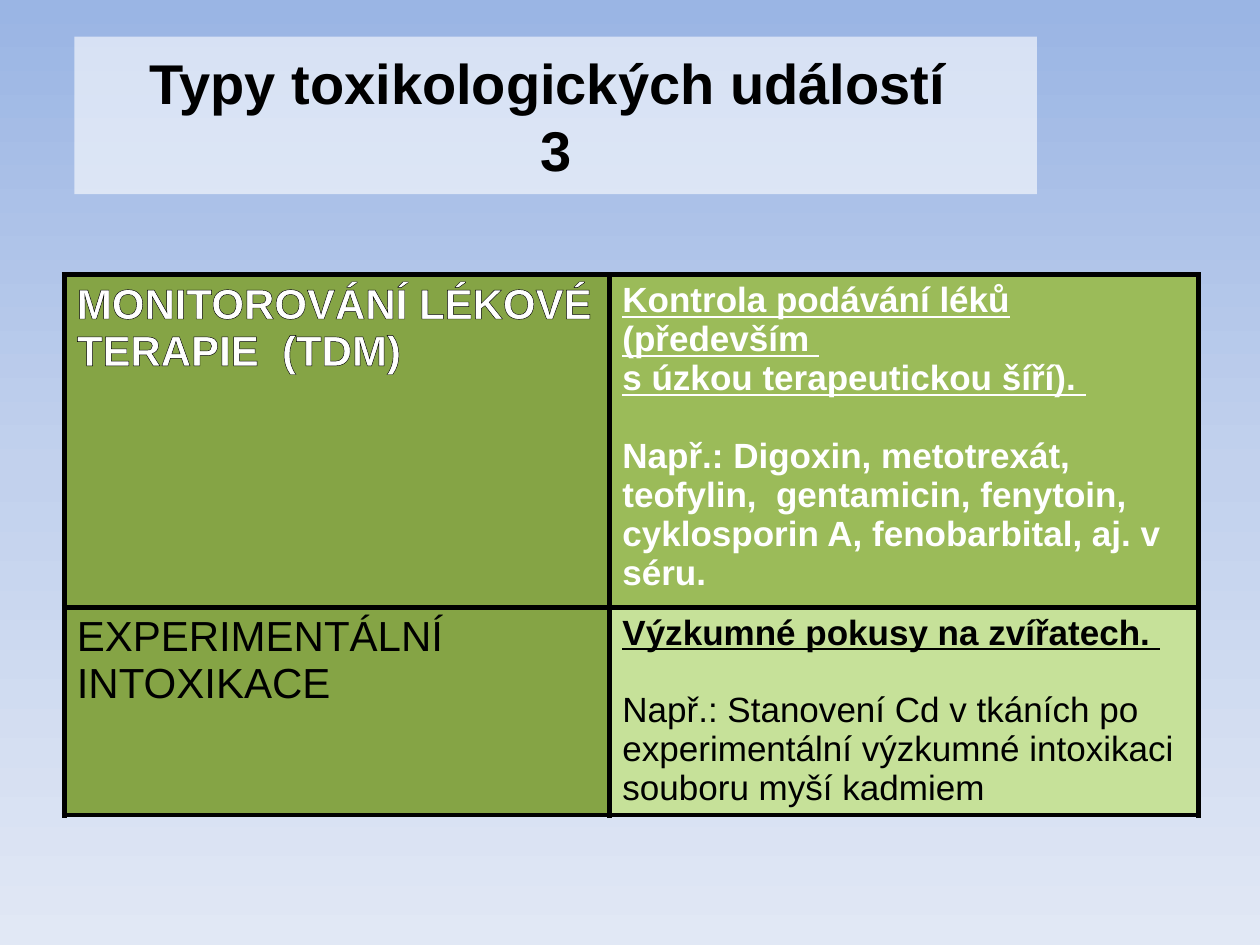
"""Build the slide on types of toxicological events."""
from copy import deepcopy
from dataclasses import dataclass

from lxml.etree import SubElement
from pptx import Presentation
from pptx.dml.color import RGBColor
from pptx.enum.shapes import MSO_SHAPE
from pptx.enum.text import MSO_ANCHOR, PP_ALIGN
from pptx.oxml.ns import qn
from pptx.slide import Slide
from pptx.table import _Cell
from pptx.util import Inches, Pt


@dataclass(frozen=True)
class Theme:
    font: str = "Arial"
    title_size: int = 32
    label_size: int = 24
    detail_size: int = 20
    paragraph_gap: int = 22
    border_width: float = 3
    outline_width: float = 0.75
    black: str = "000000"
    white: str = "FFFFFF"
    label_fill: str = "85A445"
    sky: tuple[str, ...] = ("9AB5E4", "C2D1ED", "E1E8F5")


@dataclass(frozen=True)
class Passage:
    text: str
    size: int
    color: str
    bold: bool = False
    underline: bool = False
    outline: str | None = None


@dataclass(frozen=True)
class EventType:
    label: Passage
    details: tuple[Passage, ...]
    detail_fill: str
    height: float


THEME = Theme()
EVENTS = (
    EventType(
        Passage("MONITOROVÁNÍ LÉKOVÉ TERAPIE  (TDM)", THEME.label_size, THEME.white,
                bold=True, outline=THEME.black),
        (
            Passage("Kontrola podávání léků (především \vs úzkou terapeutickou šíří). ",
                    THEME.detail_size, THEME.white, bold=True, underline=True),
            Passage("Např.: Digoxin, metotrexát, teofylin,  gentamicin, fenytoin, "
                    "cyklosporin A, fenobarbital, aj. v séru.",
                    THEME.detail_size, THEME.white, bold=True),
        ),
        "9BBB59",
        2.64,
    ),
    EventType(
        Passage("EXPERIMENTÁLNÍ INTOXIKACE", THEME.label_size, THEME.black,
                outline=THEME.white),
        (
            Passage("Výzkumné pokusy na zvířatech. ", THEME.detail_size, THEME.black,
                    bold=True, underline=True),
            Passage("Např.: Stanovení Cd v tkáních po experimentální výzkumné "
                    "intoxikaci souboru myší kadmiem", THEME.detail_size, THEME.black),
        ),
        "C6E199",
        1.65,
    ),
)


def add_solid(parent, color: str):
    """Append a solid fill to an XML element and return its colour."""
    fill = SubElement(parent, qn("a:solidFill"))
    return SubElement(fill, qn("a:srgbClr"), val=color)


def paint_background(page: Slide) -> None:
    """Paint the vertical sky gradient."""
    fill = page.background.fill
    fill.gradient()
    fill.gradient_angle = 270
    stop_list = next(page.element.iter(qn("a:gsLst")))
    stop_list.insert(1, deepcopy(stop_list[0]))
    for index, (stop, color) in enumerate(zip(fill.gradient_stops, THEME.sky)):
        stop.position = index / (len(THEME.sky) - 1)
        stop.color.rgb = RGBColor.from_string(color)


def write_passage(paragraph, passage: Passage) -> None:
    """Write a passage into a paragraph and format its runs."""
    paragraph.text = passage.text
    for span in paragraph.runs:
        font = span.font
        font.name = THEME.font
        font.size = Pt(passage.size)
        font.bold = passage.bold
        font.underline = passage.underline
        font.color.rgb = RGBColor.from_string(passage.color)
        if passage.outline:
            properties = span._r.get_or_add_rPr()
            line = SubElement(properties, qn("a:ln"), w=str(Pt(THEME.outline_width)))
            add_solid(line, passage.outline)
            properties.insert(0, line)


def add_title(page: Slide) -> None:
    """Add the translucent title panel."""
    box = page.shapes.add_shape(MSO_SHAPE.RECTANGLE, Inches(0.59), Inches(0.29),
                                Inches(7.64), Inches(1.25))
    box.shadow.inherit = False
    box.line.fill.background()
    box.fill.solid()
    box.fill.fore_color.rgb = RGBColor.from_string(THEME.white)
    color = next(box._element.spPr.iter(qn("a:srgbClr")))
    SubElement(color, qn("a:alpha"), val="60000")
    frame = box.text_frame
    frame.word_wrap = True
    frame.vertical_anchor = MSO_ANCHOR.MIDDLE
    paragraph = frame.paragraphs[0]
    paragraph.alignment = PP_ALIGN.CENTER
    write_passage(paragraph, Passage("Typy toxikologických událostí \v3",
                                     THEME.title_size, THEME.black, bold=True))


def fill_cell(cell: _Cell, passages: tuple[Passage, ...], color: str) -> None:
    """Write, border and fill one table cell."""
    frame = cell.text_frame
    for index, passage in enumerate(passages):
        paragraph = frame.add_paragraph() if index else frame.paragraphs[0]
        if index:
            paragraph.space_before = Pt(THEME.paragraph_gap)
        write_passage(paragraph, passage)
    properties = cell._tc.get_or_add_tcPr()
    for side in ("lnL", "lnR", "lnT", "lnB"):
        line = SubElement(properties, qn(f"a:{side}"), w=str(Pt(THEME.border_width)))
        add_solid(line, THEME.black)
    cell.fill.solid()
    cell.fill.fore_color.rgb = RGBColor.from_string(color)
    properties.append(properties.find(qn("a:solidFill")))


def add_event_table(page: Slide, events: tuple[EventType, ...]) -> None:
    """Add the table with one row for each event type."""
    widths = (4.33, 4.67)
    table = page.shapes.add_table(
        len(events), len(widths), Inches(0.51), Inches(2.18), Inches(sum(widths)),
        Inches(sum(event.height for event in events))).table
    table.first_row = False
    table.horz_banding = False
    for column, width in zip(table.columns, widths):
        column.width = Inches(width)
    for row, event in zip(table.rows, events):
        row.height = Inches(event.height)
        fill_cell(row.cells[0], (event.label,), THEME.label_fill)
        fill_cell(row.cells[1], event.details, event.detail_fill)


def main() -> None:
    """Build and save the deck."""
    deck = Presentation()
    deck.slide_width = Inches(10)
    deck.slide_height = Inches(7.5)
    page = deck.slides.add_slide(deck.slide_layouts[6])
    paint_background(page)
    add_title(page)
    add_event_table(page, EVENTS)
    deck.save("out.pptx")


if __name__ == "__main__":
    main()
